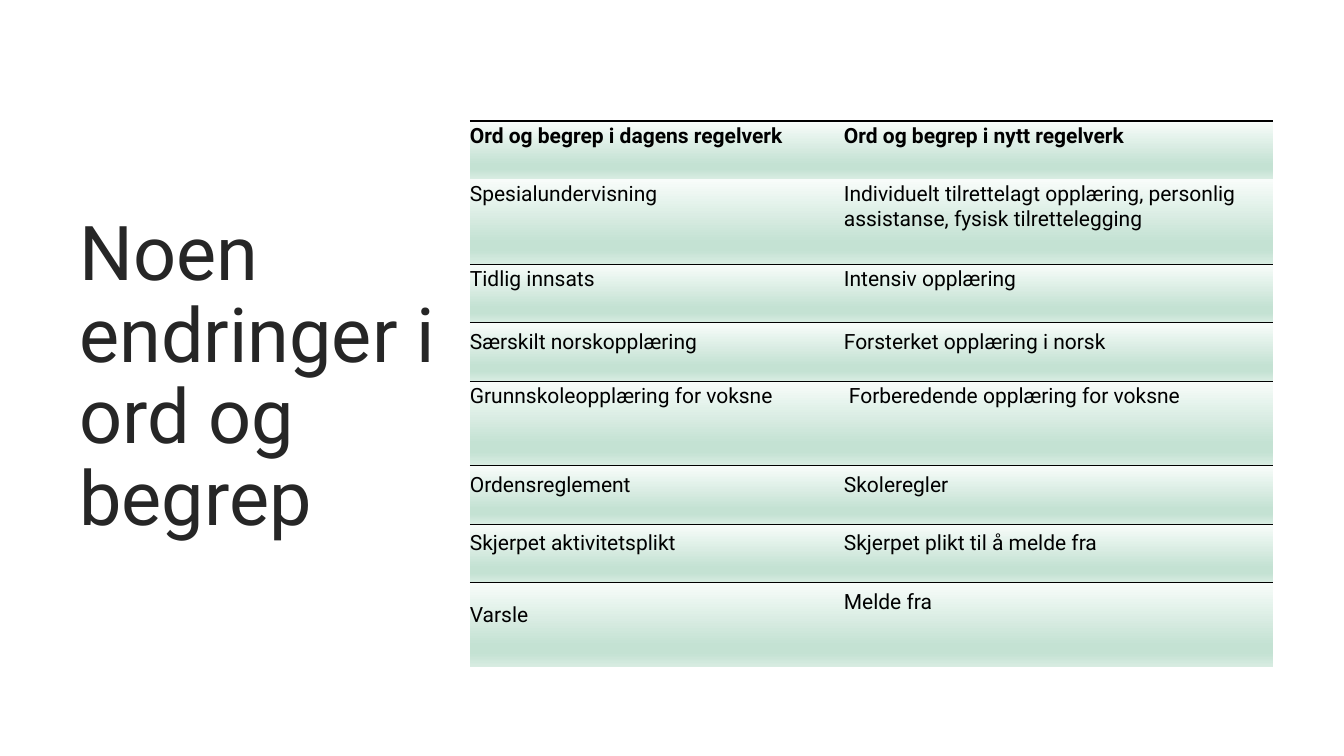
from dataclasses import dataclass

from lxml.etree import SubElement
from pptx import Presentation
from pptx.dml.color import RGBColor
from pptx.enum.text import MSO_ANCHOR
from pptx.oxml.ns import qn
from pptx.slide import Slide
from pptx.table import Table, _Cell
from pptx.text.text import _Paragraph
from pptx.util import Inches, Pt


@dataclass(frozen=True)
class Theme:
    font: str = "Roboto"
    title_size: float = 54
    table_size: float = 15
    title_color: str = "262626"
    ink: str = "000000"
    header_line: float = 2.25
    row_line: float = 0.5
    gradient: tuple[tuple[int, str], ...] = (
        (0, "F8FCFA"), (74, "C4E2D3"), (83, "C4E2D3"), (100, "D8ECE2"))


@dataclass(frozen=True)
class TermRow:
    current: str
    new: str
    height: float = 0.58
    anchor: MSO_ANCHOR = MSO_ANCHOR.MIDDLE
    bold: bool = False
    new_left: float = 0
    new_bottom: float = 0.22


THEME = Theme()
TALL = 0.84
TOP = MSO_ANCHOR.TOP
NO_STYLE = "{2D5ABB26-0587-4C30-8999-92F81FD0307C}"
COLUMN_WIDTHS = (3.71, 4.26)
TERMS = (
    TermRow("Ord og begrep i dagens regelverk", "Ord og begrep i nytt regelverk",
            anchor=TOP, bold=True),
    TermRow("Spesialundervisning",
            "Individuelt tilrettelagt opplæring, personlig assistanse, fysisk tilrettelegging",
            TALL, TOP),
    TermRow("Tidlig innsats", "Intensiv opplæring", anchor=TOP),
    TermRow("Særskilt norskopplæring", "Forsterket opplæring i norsk"),
    TermRow("Grunnskoleopplæring for voksne", "Forberedende opplæring for voksne",
            TALL, TOP, new_left=0.05),
    TermRow("Ordensreglement", "Skoleregler"),
    TermRow("Skjerpet aktivitetsplikt", "Skjerpet plikt til å melde fra"),
    TermRow("Varsle", "Melde fra", TALL, new_bottom=0.47),
)


def write_text(para: _Paragraph, text: str, size: float, color: str, bold: bool = False) -> None:
    span = para.add_run()
    span.text = text
    for name, value in {"name": THEME.font, "size": Pt(size), "bold": bold}.items():
        setattr(span.font, name, value)
    span.font.color.rgb = RGBColor.from_string(color)


def add_border(cell: _Cell, side: str, width: float) -> None:
    line = SubElement(cell._tc.get_or_add_tcPr(), qn(f"a:{side}"), w=str(Pt(width)))
    SubElement(SubElement(line, qn("a:solidFill")), qn("a:srgbClr"), val=THEME.ink)


def add_gradient(cell: _Cell) -> None:
    gradient = SubElement(cell._tc.get_or_add_tcPr(), qn("a:gradFill"), rotWithShape="1")
    stops = SubElement(gradient, qn("a:gsLst"))
    for position, color in THEME.gradient:
        stop = SubElement(stops, qn("a:gs"), pos=str(position * 1000))
        SubElement(stop, qn("a:srgbClr"), val=color)
    SubElement(gradient, qn("a:lin"), ang="5400000", scaled="0")


def add_title(page: Slide) -> None:
    box = page.shapes.add_textbox(Inches(0.69), Inches(0.7), Inches(3.74), Inches(6.11))
    frame = box.text_frame
    for name, value in {"word_wrap": True, "vertical_anchor": MSO_ANCHOR.MIDDLE}.items():
        setattr(frame, name, value)
    para = frame.paragraphs[0]
    para.line_spacing = 0.9
    write_text(para, "Noen endringer i ord og begrep", THEME.title_size, THEME.title_color)


def fill_row(table: Table, index: int, term: TermRow) -> None:
    table.rows[index].height = Inches(term.height)
    cells = ((term.current, 0, 0.22), (term.new, term.new_left, term.new_bottom))
    for column, (text, left, bottom) in enumerate(cells):
        cell = table.cell(index, column)
        formats = {
            "margin_left": Inches(left),
            "margin_top": Inches(0.03),
            "margin_right": Inches(0.07),
            "margin_bottom": Inches(bottom),
            "vertical_anchor": term.anchor,
        }
        for name, value in formats.items():
            setattr(cell, name, value)
        # Lines run above every second row
        if index % 2 == 0:
            add_border(cell, "lnT", THEME.row_line if index else THEME.header_line)
        elif index < len(TERMS) - 1:
            add_border(cell, "lnB", THEME.row_line)
        add_gradient(cell)
        write_text(cell.text_frame.paragraphs[0], text, THEME.table_size, THEME.ink, term.bold)


def add_terms_table(page: Slide) -> None:
    frame = page.shapes.add_table(
        len(TERMS), len(COLUMN_WIDTHS), Inches(4.66), Inches(1.2),
        Inches(sum(COLUMN_WIDTHS)), Inches(sum(term.height for term in TERMS)))
    table = frame.table
    table.horz_banding = False
    table.first_row = False
    table._tbl.tblPr.find(qn("a:tableStyleId")).text = NO_STYLE
    for column, width in zip(table.columns, COLUMN_WIDTHS):
        column.width = Inches(width)
    for index, term in enumerate(TERMS):
        fill_row(table, index, term)


def main() -> None:
    deck = Presentation()
    deck.slide_width = Inches(13.33)
    deck.slide_height = Inches(7.5)
    page = deck.slides.add_slide(deck.slide_layouts[6])

    # Heading on the left, old and new terms on the right
    add_title(page)
    add_terms_table(page)
    deck.save("out.pptx")


if __name__ == "__main__":
    main()
